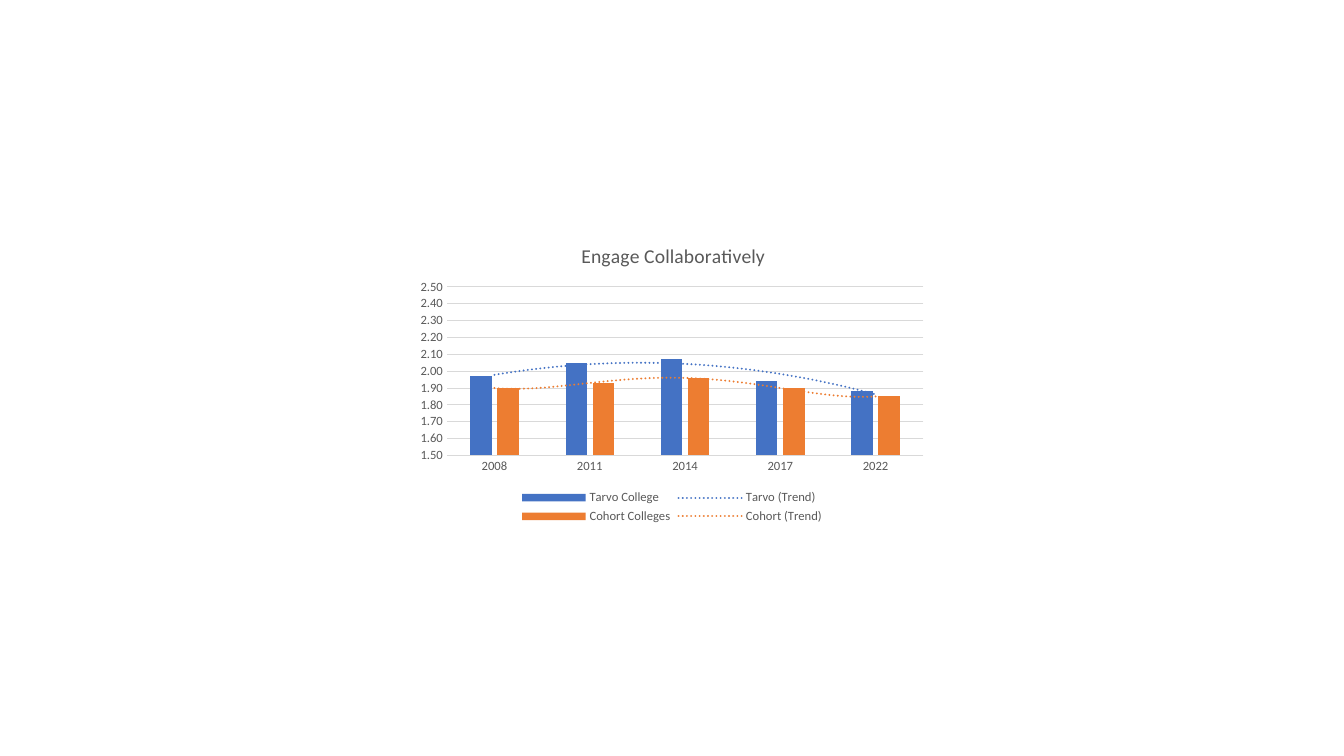
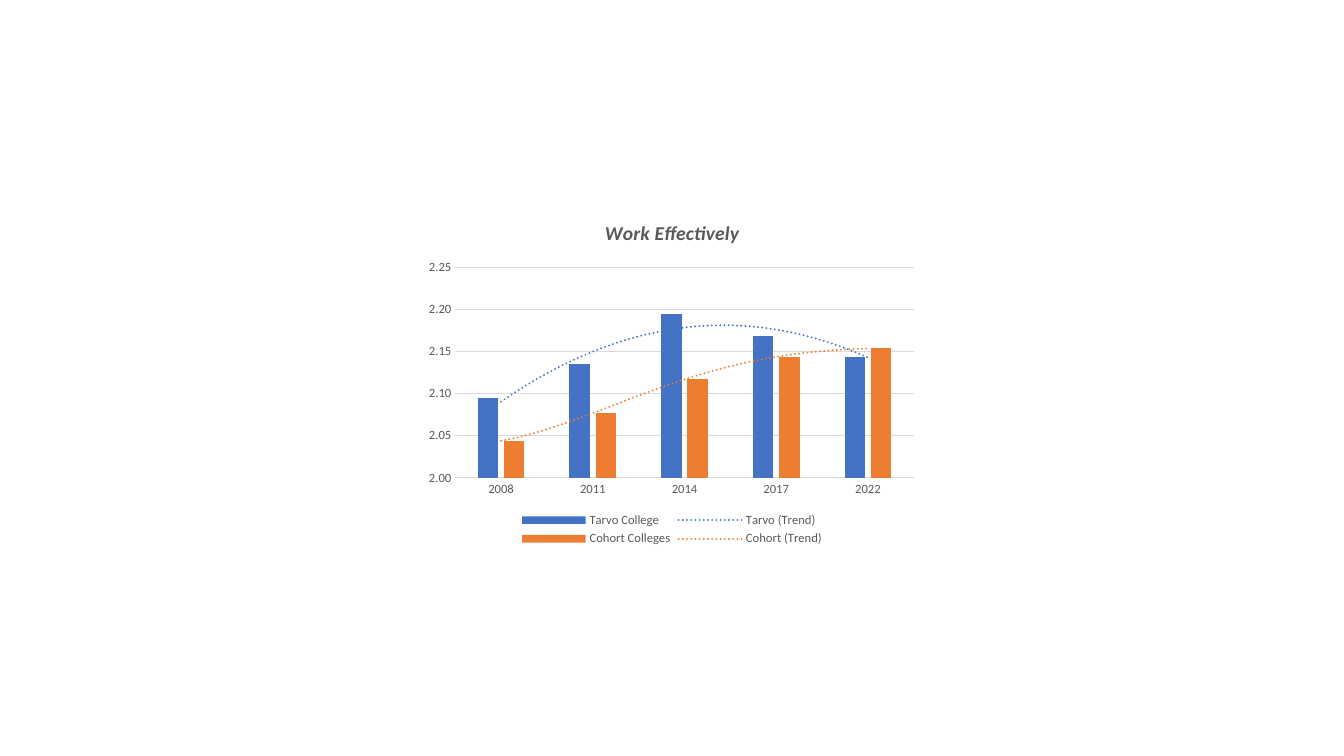
import dataclasses

import lxml.etree
import pptx
import pptx.chart.data
import pptx.dml.color
import pptx.enum.chart
import pptx.oxml
import pptx.oxml.ns
import pptx.util

Pt = pptx.util.Pt
RGB = pptx.dml.color.RGBColor.from_string
qn = pptx.oxml.ns.qn


@dataclasses.dataclass(frozen=True)
class Theme:
    font: str = "Calibri"
    text: str = "595959"
    grid: str = "D9D9D9"
    series: tuple = ("4472C4", "ED7D31")
    label_size: float = 9
    title_size: float = 14
    hairline: float = 0.75
    trend_width: float = 1.5


THEME = Theme()
YEARS = ("2008", "2011", "2014", "2017", "2022")
COLLEGES = (("Tarvo College", "Tarvo (Trend)"), ("Cohort Colleges", "Cohort (Trend)"))

SLIDES = (
    {
        "title": "Engage Collaboratively",
        "title_format": {"bold": False, "italic": False},
        "box": (293, 162, 374, 215),
        "title_at": {"x": 0.32, "y": 0.04},
        "plot_at": {"x": 0.07, "y": 0.2, "w": 0.91, "h": 0.56},
        "scale": {"minimum_scale": 1.5, "maximum_scale": 2.5, "major_unit": 0.1},
        "values": ((1.97, 2.05, 2.07, 1.94, 1.88), (1.9, 1.93, 1.96, 1.9, 1.85)),
        "orders": (2, 4),
    },
    {
        "title": "Work Effectively",
        "title_format": {"bold": True, "italic": True},
        "box": (300, 147, 360, 246),
        "title_at": {"x": 0.36, "y": 0.03},
        "plot_at": {"x": 0.07, "y": 0.18, "w": 0.91, "h": 0.61},
        "scale": {"minimum_scale": 2, "maximum_scale": 2.25, "major_unit": 0.05},
        "values": ((2.095, 2.136, 2.195, 2.169, 2.144), (2.044, 2.077, 2.117, 2.144, 2.154)),
        "orders": (2, 4),
    },
)


def set_attrs(obj, values):
    for name, value in values.items():
        setattr(obj, name, value)


def set_font(font, size, **extra):
    set_attrs(font, {"name": THEME.font, "size": Pt(size), **extra})
    font.color.rgb = RGB(THEME.text)


def set_line(line, color, width):
    line.color.rgb = RGB(color)
    line.width = Pt(width)


def set_layout(parent, index, fractions, inner=False):
    for old in parent.findall(qn("c:layout")):
        parent.remove(old)
    layout = parent.makeelement(qn("c:layout"))
    manual = lxml.etree.SubElement(layout, qn("c:manualLayout"))
    settings = {"layoutTarget": "inner"} if inner else {}
    settings.update(xMode="edge", yMode="edge", **fractions)
    for tag, value in settings.items():
        lxml.etree.SubElement(manual, qn("c:" + tag)).set("val", str(value))
    parent.insert(index, layout)


def add_trend(series, name, color, order):
    trend = pptx.oxml.parse_xml(
        f'<c:trendline {pptx.oxml.ns.nsdecls("c", "a")}><c:name>{name}</c:name>'
        f'<c:spPr><a:ln w="{Pt(THEME.trend_width)}" cap="rnd"><a:solidFill>'
        f'<a:srgbClr val="{color}"/></a:solidFill><a:prstDash val="sysDot"/></a:ln></c:spPr>'
        f'<c:trendlineType val="poly"/><c:order val="{order}"/>'
        '<c:dispRSqr val="0"/><c:dispEq val="0"/></c:trendline>'
    )
    series._element.find(qn("c:cat")).addprevious(trend)


def style_title(chart, content):
    chart.has_title = True
    tf = chart.chart_title.text_frame
    r = tf.paragraphs[0].add_run()
    r.text = content["title"]
    set_font(r.font, THEME.title_size, **content["title_format"])
    set_layout(chart.chart_title._element, 1, content["title_at"])


def style_axes(chart, scale):
    no_tick = pptx.enum.chart.XL_TICK_MARK.NONE
    for axis in (chart.category_axis, chart.value_axis):
        set_attrs(axis, {"major_tick_mark": no_tick, "minor_tick_mark": no_tick})
        set_font(axis.tick_labels.font, THEME.label_size)
    set_line(chart.category_axis.format.line, THEME.grid, THEME.hairline)
    axis = chart.value_axis
    set_attrs(axis, {"has_major_gridlines": True, **scale})
    set_attrs(axis.tick_labels, {"number_format": "0.00", "number_format_is_linked": False})
    set_line(axis.major_gridlines.format.line, THEME.grid, THEME.hairline)
    axis.format.line.fill.background()


def style_legend(chart):
    chart.has_legend = True
    position = pptx.enum.chart.XL_LEGEND_POSITION.BOTTOM
    set_attrs(chart.legend, {"position": position, "include_in_layout": False})
    set_font(chart.legend.font, THEME.label_size)


def add_trend_chart(s, box, content):
    data = pptx.chart.data.CategoryChartData(number_format="0.00")
    data.categories = YEARS
    for (college, _), values in zip(COLLEGES, content["values"]):
        data.add_series(college, values)
    kind = pptx.enum.chart.XL_CHART_TYPE.COLUMN_CLUSTERED
    chart = s.shapes.add_chart(kind, *map(Pt, box), data).chart
    set_font(chart.font, THEME.label_size)
    style_title(chart, content)
    style_axes(chart, content["scale"])
    style_legend(chart)
    plot = chart.plots[0]
    set_attrs(plot, {"gap_width": 219, "overlap": -27, "vary_by_categories": False})
    set_layout(chart._chartSpace.chart.plotArea, 0, content["plot_at"], inner=True)
    for series, (_, trend), color, order in zip(
        plot.series, COLLEGES, THEME.series, content["orders"]
    ):
        series.format.fill.solid()
        series.format.fill.fore_color.rgb = RGB(color)
        series.invert_if_negative = False
        add_trend(series, trend, color, order)


def main():
    prs = pptx.Presentation()
    set_attrs(prs, {"slide_width": Pt(960), "slide_height": Pt(540)})
    for content in SLIDES:
        s = prs.slides.add_slide(prs.slide_layouts[6])
        add_trend_chart(s, content["box"], content)
    prs.save("out.pptx")


if __name__ == "__main__":
    main()
